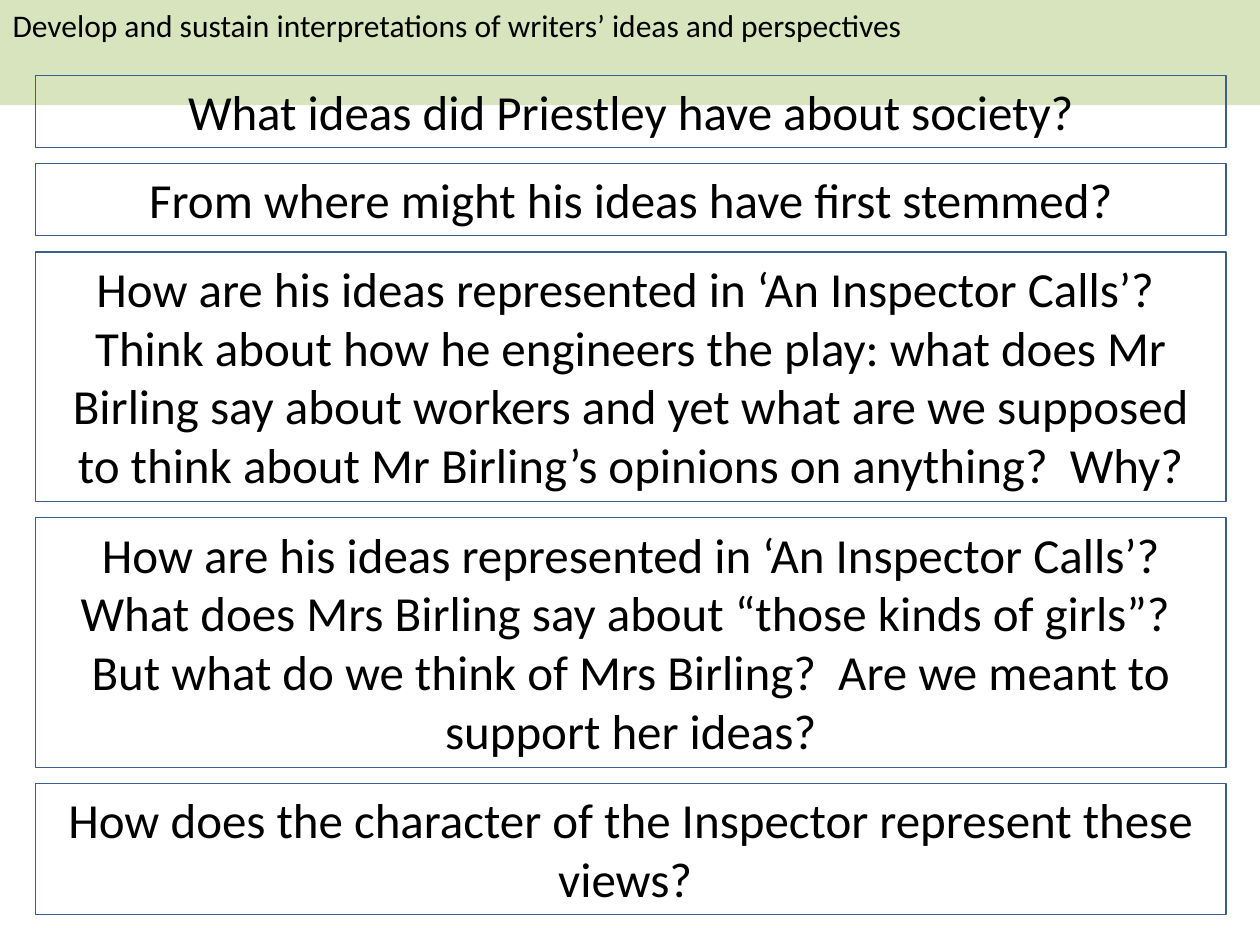
from pptx import Presentation
from pptx.dml.color import RGBColor
from pptx.enum.shapes import MSO_SHAPE
from pptx.enum.text import MSO_ANCHOR, MSO_AUTO_SIZE, PP_ALIGN
from pptx.util import Inches, Pt

RECTANGLE = MSO_SHAPE.RECTANGLE
TOP = MSO_ANCHOR.TOP
FIT_SHAPE = MSO_AUTO_SIZE.SHAPE_TO_FIT_TEXT
LEFT, CENTER = PP_ALIGN.LEFT, PP_ALIGN.CENTER

BLACK = RGBColor(0x00, 0x00, 0x00)
PALE_GREEN = RGBColor(0xD7, 0xE4, 0xBD)
BLUE = RGBColor(0x3A, 0x5F, 0x8C)

SLIDE_WIDTH, SLIDE_HEIGHT = 10, 7.5
FIRST_TOP, GAP = 0.6, 0.13
ONE_LINE, EXTRA_LINE = 0.57, 0.47

# Each question with the number of lines it fills
QUESTIONS = [
    ("What ideas did Priestley have about society?", 1),
    ("From where might his ideas have first stemmed?", 1),
    ("How are his ideas represented in ‘An Inspector Calls’?  Think about how "
     "he engineers the play: what does Mr Birling say about workers and yet "
     "what are we supposed to think about Mr Birling’s opinions on anything?  "
     "Why?", 4),
    ("How are his ideas represented in ‘An Inspector Calls’? What does Mrs "
     "Birling say about “those kinds of girls”?  But what do we think of Mrs "
     "Birling?  Are we meant to support her ideas?", 4),
    ("How does the character of the Inspector represent these views? ", 2),
]


class QuestionSlide:
    font_name = "Calibri"
    objective_size = Pt(18)
    question_size = Pt(28)

    def __init__(self, presentation):
        self.slide = presentation.slides.add_slide(presentation.slide_layouts[5])

    def set_text(self, shape, text, size, alignment):
        frame = shape.text_frame
        frame.text = text
        frame.word_wrap = True
        frame.auto_size = FIT_SHAPE
        frame.vertical_anchor = TOP
        paragraph = frame.paragraphs[0]
        paragraph.alignment = alignment
        paragraph.font.name = self.font_name
        paragraph.font.size = size
        paragraph.font.color.rgb = BLACK

    def objective(self, text):
        banner = self.slide.shapes.title
        banner.left, banner.top = Inches(0), Inches(0)
        banner.width, banner.height = Inches(SLIDE_WIDTH), Inches(0.4)
        banner.fill.solid()
        banner.fill.fore_color.rgb = PALE_GREEN
        self.set_text(banner, text, self.objective_size, LEFT)

    def question(self, text, top, height):
        box = self.slide.shapes.add_shape(
            RECTANGLE, Inches(0.28), Inches(top), Inches(9.45), Inches(height))
        box.shadow.inherit = False
        box.fill.background()
        box.line.color.rgb = BLUE
        box.line.width = Pt(0.75)
        self.set_text(box, text, self.question_size, CENTER)


def main():
    presentation = Presentation()
    presentation.slide_width = Inches(SLIDE_WIDTH)
    presentation.slide_height = Inches(SLIDE_HEIGHT)
    page = QuestionSlide(presentation)

    # Learning objective banner
    page.objective("Develop and sustain interpretations of writers’ ideas "
                   "and perspectives")

    # Question boxes, stacked with equal gaps
    top = FIRST_TOP
    for text, lines in QUESTIONS:
        height = ONE_LINE + (lines - 1) * EXTRA_LINE
        page.question(text, top, height)
        top += height + GAP

    presentation.save("out.pptx")


if __name__ == "__main__":
    main()
